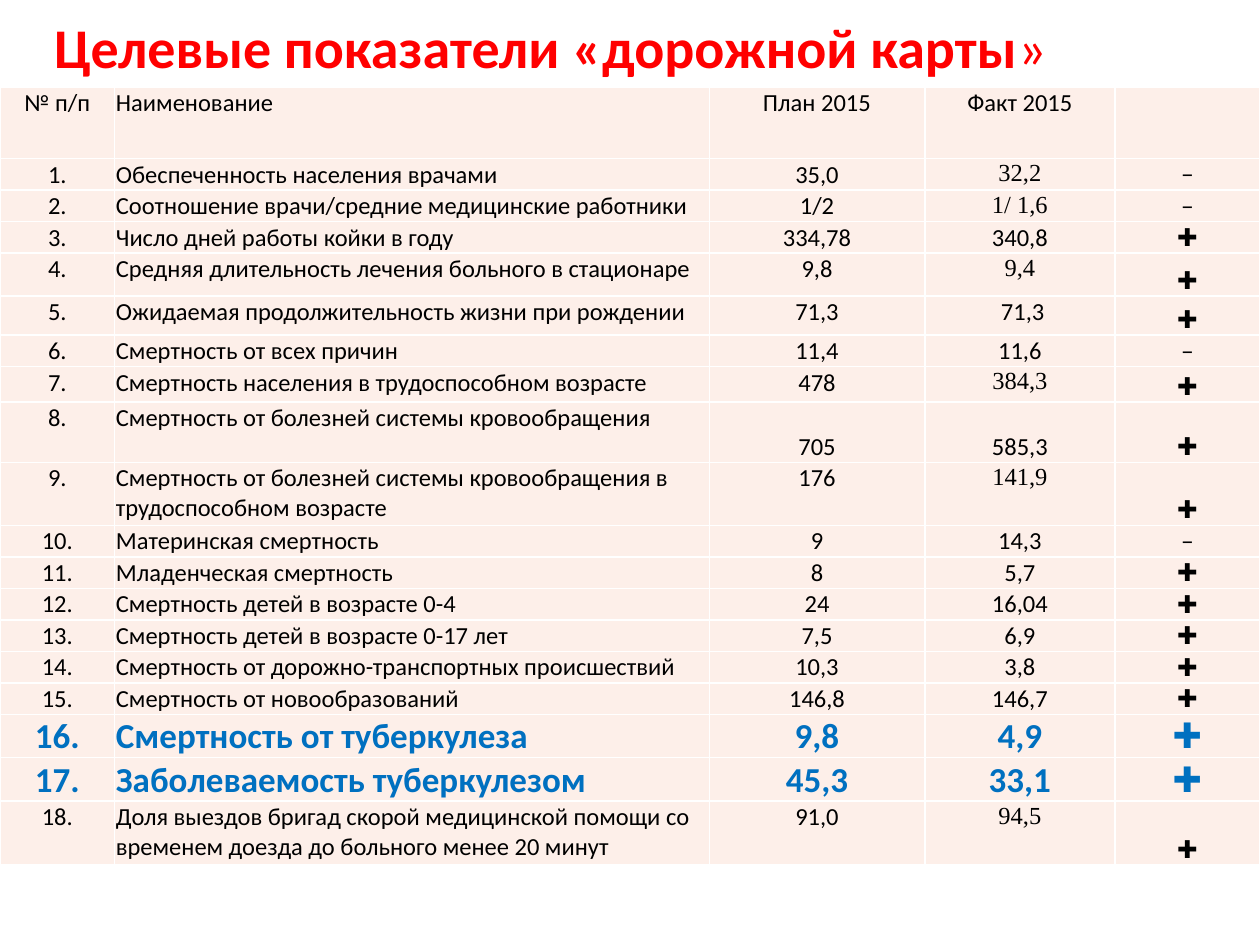
from lxml.etree import SubElement
from pptx import Presentation
from pptx.dml.color import RGBColor
from pptx.enum.text import MSO_ANCHOR, MSO_AUTO_SIZE, PP_ALIGN
from pptx.oxml.ns import qn
from pptx.util import Inches, Pt

RED = RGBColor(0xFF, 0x00, 0x00)
BLUE = RGBColor(0x00, 0x70, 0xC0)
BLACK = RGBColor(0x00, 0x00, 0x00)
WHITE = RGBColor(0xFF, 0xFF, 0xFF)
BLUSH = RGBColor(0xFD, 0xEF, 0xE9)

HEADER = ("№ п/п", "Наименование", "План 2015", "Факт 2015", "")
INDICATORS = [
    ("Обеспеченность населения врачами", "35,0", "32,2", "−"),
    ("Соотношение врачи/средние медицинские работники", "1/2", "1/ 1,6", "−"),
    ("Число дней работы койки в году", "334,78", "340,8", "✚"),
    ("Средняя длительность лечения больного в стационаре", "9,8", "9,4", "✚"),
    ("Ожидаемая продолжительность жизни при рождении", "71,3", " 71,3", "✚"),
    ("Смертность от всех причин", "11,4", "11,6", "−"),
    ("Смертность населения в трудоспособном возрасте", "478", "384,3", "✚"),
    ("Смертность от болезней системы кровообращения", "705", "585,3", "✚"),
    ("Смертность от болезней системы кровообращения в трудоспособном возрасте",
     "176", "141,9", "✚"),
    ("Материнская смертность", "9", "14,3", "−"),
    ("Младенческая смертность", "8", "5,7", "✚"),
    ("Смертность детей в возрасте 0-4", "24", "16,04", "✚"),
    ("Смертность детей в возрасте 0-17 лет", "7,5", "6,9", "✚"),
    ("Смертность от дорожно-транспортных происшествий", "10,3", "3,8", "✚"),
    ("Смертность от новообразований", "146,8", "146,7", "✚"),
    ("Смертность от туберкулеза", "9,8", "4,9", "✚"),
    ("Заболеваемость туберкулезом", "45,3", "33,1", "✚"),
    ("Доля выездов бригад скорой медицинской помощи со временем доезда "
     "до больного менее 20 минут", "91,0", "94,5", "✚"),
]
TUBERCULOSIS_ROWS = (16, 17)
SERIF_FACT_ROWS = (1, 2, 4, 7, 9, 18)
LOW_VALUE_ROW = 8
NAME, PLAN, FACT, MARK = 1, 2, 3, 4

COLUMN_WIDTHS = (0.91, 4.72, 1.71, 1.51, 1.15)
USUAL_HEIGHT = 0.25
ROW_HEIGHTS = {0: 0.57, 4: 0.34, 5: 0.31, 7: 0.28, 8: 0.48, 9: 0.5,
               16: 0.34, 17: 0.34, 18: 0.51}


def add_span(para, text, size, color, bold=False, font="Calibri"):
    span = para.add_run()
    span.text = text
    span.font.name = font
    span.font.size = Pt(size)
    span.font.bold = bold
    span.font.color.rgb = color


def add_borders(cell):
    """Draw white 1 pt lines on all sides; call before filling the cell."""
    properties = cell._tc.get_or_add_tcPr()
    for side in ("a:lnL", "a:lnR", "a:lnT", "a:lnB"):
        line = SubElement(properties, qn(side), w=str(Pt(1)))
        fill = SubElement(line, qn("a:solidFill"))
        SubElement(fill, qn("a:srgbClr"), val=str(WHITE))


deck = Presentation()
deck.slide_width, deck.slide_height = Inches(10), Inches(7.5)
page = deck.slides.add_slide(deck.slide_layouts[5])

title = page.shapes.title
title.left, title.top = Inches(0.33), Inches(0.05)
title.width, title.height = Inches(8.57), Inches(0.64)
frame = title.text_frame
frame.word_wrap = True
frame.auto_size = MSO_AUTO_SIZE.SHAPE_TO_FIT_TEXT
frame.vertical_anchor = MSO_ANCHOR.TOP
para = frame.paragraphs[0]
para.alignment = PP_ALIGN.LEFT
add_span(para, "Целевые показатели «дорожной карты", 32, RED, bold=True)
add_span(para, "»", 32, RED)

rows = [HEADER] + [(f"{number}.", *indicator)
                   for number, indicator in enumerate(INDICATORS, 1)]
heights = [ROW_HEIGHTS.get(index, USUAL_HEIGHT) for index in range(len(rows))]
table = page.shapes.add_table(
    len(rows), len(HEADER), Inches(0), Inches(0.69),
    Inches(sum(COLUMN_WIDTHS)), Inches(sum(heights))).table
table.first_row = False
table.horz_banding = False
for column, width in zip(table.columns, COLUMN_WIDTHS):
    column.width = Inches(width)

for row_index, texts in enumerate(rows):
    table.rows[row_index].height = Inches(heights[row_index])
    highlighted = row_index in TUBERCULOSIS_ROWS
    size, color = (20, BLUE) if highlighted else (14, BLACK)
    for column_index, text in enumerate(texts):
        cell = table.cell(row_index, column_index)
        add_borders(cell)
        cell.fill.solid()
        cell.fill.fore_color.rgb = BLUSH
        cell.margin_left = cell.margin_right = cell.margin_top = Inches(0.01)
        cell.margin_bottom = Inches(0)
        low_value = row_index == LOW_VALUE_ROW and column_index in (PLAN, FACT)
        at_bottom = low_value or (column_index == MARK and row_index > 0)
        cell.vertical_anchor = MSO_ANCHOR.BOTTOM if at_bottom else MSO_ANCHOR.TOP
        para = cell.text_frame.paragraphs[0]
        para.alignment = PP_ALIGN.LEFT if column_index == NAME else PP_ALIGN.CENTER
        serif = column_index == FACT and row_index in SERIF_FACT_ROWS
        if text:
            add_span(para, text, size, color, highlighted,
                     "Times New Roman" if serif else "Calibri")

deck.save("out.pptx")
